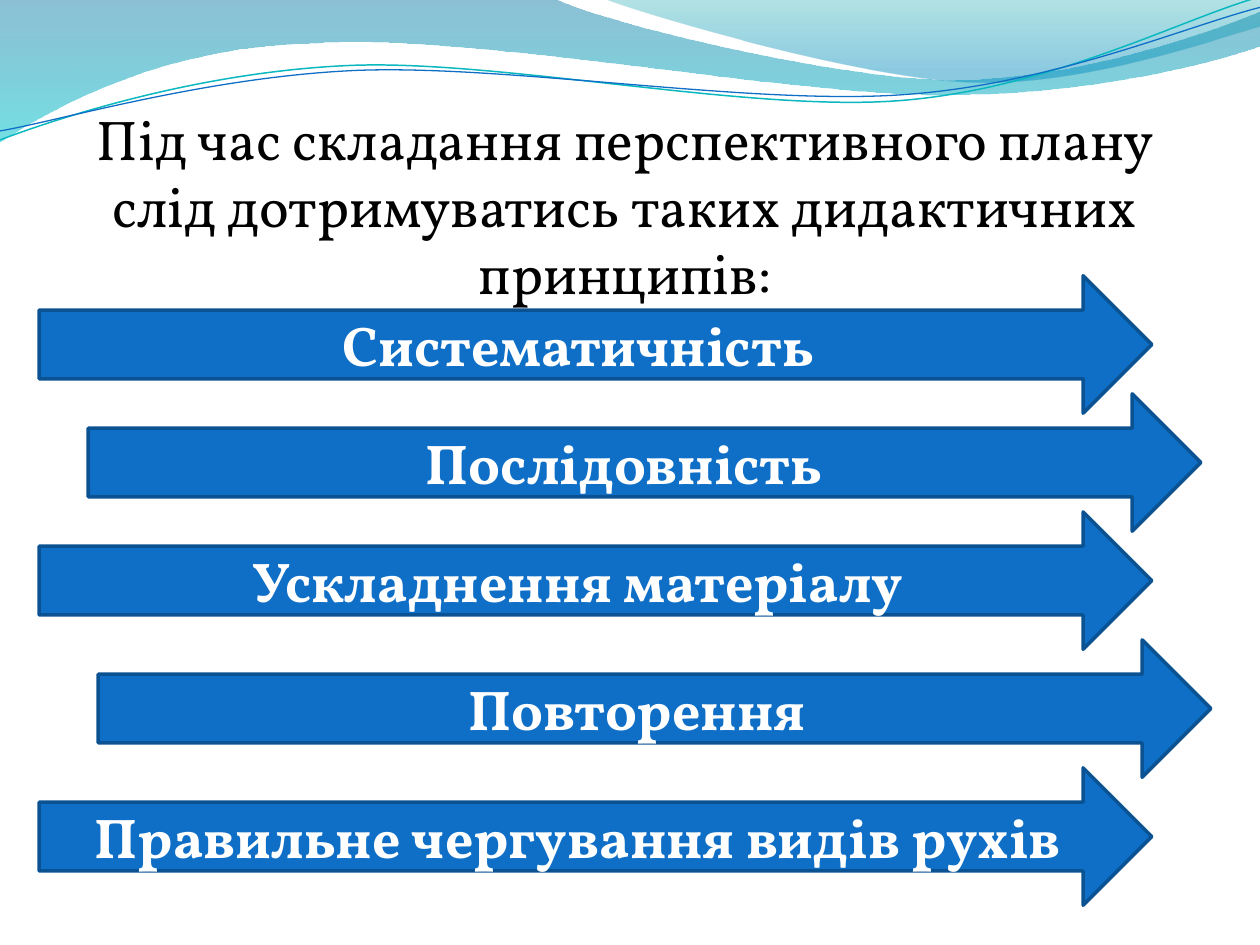
from math import cos, radians, sin

from lxml import etree
from pptx import Presentation
from pptx.dml.color import RGBColor
from pptx.enum.shapes import MSO_SHAPE
from pptx.enum.text import MSO_ANCHOR, MSO_AUTO_SIZE, PP_ALIGN
from pptx.oxml.ns import qn
from pptx.util import Cm, Pt

RIGHT_ARROW = MSO_SHAPE.RIGHT_ARROW
CENTER = PP_ALIGN.CENTER
TOP, MIDDLE = MSO_ANCHOR.TOP, MSO_ANCHOR.MIDDLE
GROW = MSO_AUTO_SIZE.SHAPE_TO_FIT_TEXT

THEME = {
    "font": "Vollkorn", "size": 32, "small": 18,
    "title": "000000", "label": "FFFFFF",
    "arrow": "0F6FC6", "edge": "0B5292", "edge_width": 2,
}

TITLE = "Під час складання перспективного плану слід дотримуватись таких дидактичних принципів:"
TITLE_BOX = (0.99, 1.98, 23.22, 4.37)

ARROW_SIZE = (22.43, 2.77)
PRINCIPLES = [
    ("Послідовність", " ", 1.78, 7.94),
    ("Систематичність", "", 0.79, 5.56),
    ("Ускладнення матеріалу", "", 0.79, 10.32),
    ("Повторення", "", 1.98, 12.9),
    ("Правильне чергування видів рухів", "", 0.79, 15.48),
]

BANDS = [
    ([(0, "0074A1", 45), (1, "00C6CF", 55)], [
        [(0, 0)], [(11.18, -0.03)],
        [(12.09, 0.43), (16.87, 1.6), (19.25, 1.6)],
        [(21.67, 1.6), (24.33, 0.66), (25.4, 0.23)],
        [(25.43, 0.91)],
        [(24.97, 1.12), (22.1, 1.93), (18.95, 1.91)],
        [(15.8, 1.91), (9.7, 0.71), (6.53, 0.86)],
        [(3.28, 0.91), (1.17, 2.11), (-0.03, 2.87)],
        [(0, 0)],
    ]),
    ([(0, "00A1A9", 30), (0.8, "008BBF", 45)], [
        [(12.17, -0.03)],
        [(12.93, 0.28), (17.32, 1.57), (19.53, 1.65)],
        [(21.74, 1.75), (24.41, 0.81), (25.4, 0.53)],
        [(25.4, 0)], [(12.17, -0.03)],
    ]),
]
STRAND_ANGLE = 357.3
STRANDS = [
    ("0AB8BF", 0.85, (12.67, 1.46), [
        [(0, 2.82)],
        [(1.22, 2.36), (4.01, 1.45), (7.04, 1.32)],
        [(10.03, 1.19), (15.06, 2.26), (18.11, 2.03)],
        [(21.16, 1.8), (23.83, 0.38), (25.35, -0.05)],
    ]),
    ("0F6FC6", 0.75, (12.69, 1.5), [
        [(0, 2.64)],
        [(1.19, 2.44), (4.17, 1.55), (7.19, 1.42)],
        [(10.24, 1.3), (15.16, 2.13), (18.21, 1.91)],
        [(21.23, 1.7), (23.9, 0.53), (25.4, 0.15)],
    ]),
]


def rgb(value):
    return RGBColor.from_string(value)


def turn(point, center, angle):
    a = radians(angle)
    dx, dy = point[0] - center[0], point[1] - center[1]
    return center[0] + dx * cos(a) - dy * sin(a), center[1] + dx * sin(a) + dy * cos(a)


def add_outline(s, steps, close):
    points = [(Cm(x), Cm(y)) for step in steps for x, y in step]
    builder = s.shapes.build_freeform(*points[0])
    builder.add_line_segments(points[1:], close=close)
    sp = builder.convert_to_shape()
    sp.shadow.inherit = False
    segments = iter(list(sp.element.spPr.iter(qn("a:lnTo"))))
    for step in steps[1:]:
        group = [next(segments) for _ in step]
        if len(group) == 3:
            curve = group[0]
            bezier = etree.Element(qn("a:cubicBezTo"))
            curve.addprevious(bezier)
            for segment in group:
                bezier.append(segment[0])
                segment.getparent().remove(segment)
    return sp


def add_band(s, stops, steps):
    sp = add_outline(s, steps, True)
    sp.line.fill.background()
    sp.fill.gradient()
    sp.fill.gradient_angle = 270
    for stop, (position, color, _) in zip(sp.fill.gradient_stops, stops):
        stop.position = position
        stop.color.rgb = rgb(color)
    for node, (_, _, opacity) in zip(sp.element.spPr.iter(qn("a:srgbClr")), stops):
        etree.SubElement(node, qn("a:alpha")).set("val", str(opacity * 1000))


def add_strand(s, color, width, center, steps):
    level = [[turn(point, center, -STRAND_ANGLE) for point in step] for step in steps]
    sp = add_outline(s, level, False)
    sp.rotation = STRAND_ANGLE
    sp.fill.background()
    sp.line.color.rgb = rgb(color)
    sp.line.width = Pt(width)


def style(r, size, color, bold):
    r.font.name = THEME["font"]
    r.font.size = Pt(size)
    r.font.bold = bold
    r.font.color.rgb = rgb(color)


def write(sp, text, color, bold, anchor):
    tf = sp.text_frame
    tf.text = text
    tf.word_wrap = True
    tf.vertical_anchor = anchor
    p = tf.paragraphs[0]
    p.alignment = CENTER
    style(p.runs[0], THEME["size"], color, bold)
    return p


def add_arrow(s, text, tail, left, top):
    sp = s.shapes.add_shape(RIGHT_ARROW, *map(Cm, (left, top, *ARROW_SIZE)))
    sp.shadow.inherit = False
    sp.fill.solid()
    sp.fill.fore_color.rgb = rgb(THEME["arrow"])
    sp.line.color.rgb = rgb(THEME["edge"])
    sp.line.width = Pt(THEME["edge_width"])
    p = write(sp, text, THEME["label"], True, MIDDLE)
    if tail:
        r = p.add_run()
        r.text = tail
        style(r, THEME["small"], THEME["label"], False)


def main():
    prs = Presentation()
    prs.slide_width, prs.slide_height = Cm(25.4), Cm(19.05)
    s = prs.slides.add_slide(prs.slide_layouts[5])
    for band in BANDS:
        add_band(s, *band)
    for strand in STRANDS:
        add_strand(s, *strand)
    title = s.shapes.title
    title.left, title.top, title.width, title.height = map(Cm, TITLE_BOX)
    write(title, TITLE, THEME["title"], False, TOP)
    title.text_frame.auto_size = GROW
    for principle in PRINCIPLES:
        add_arrow(s, *principle)
    prs.save("out.pptx")


if __name__ == "__main__":
    main()
